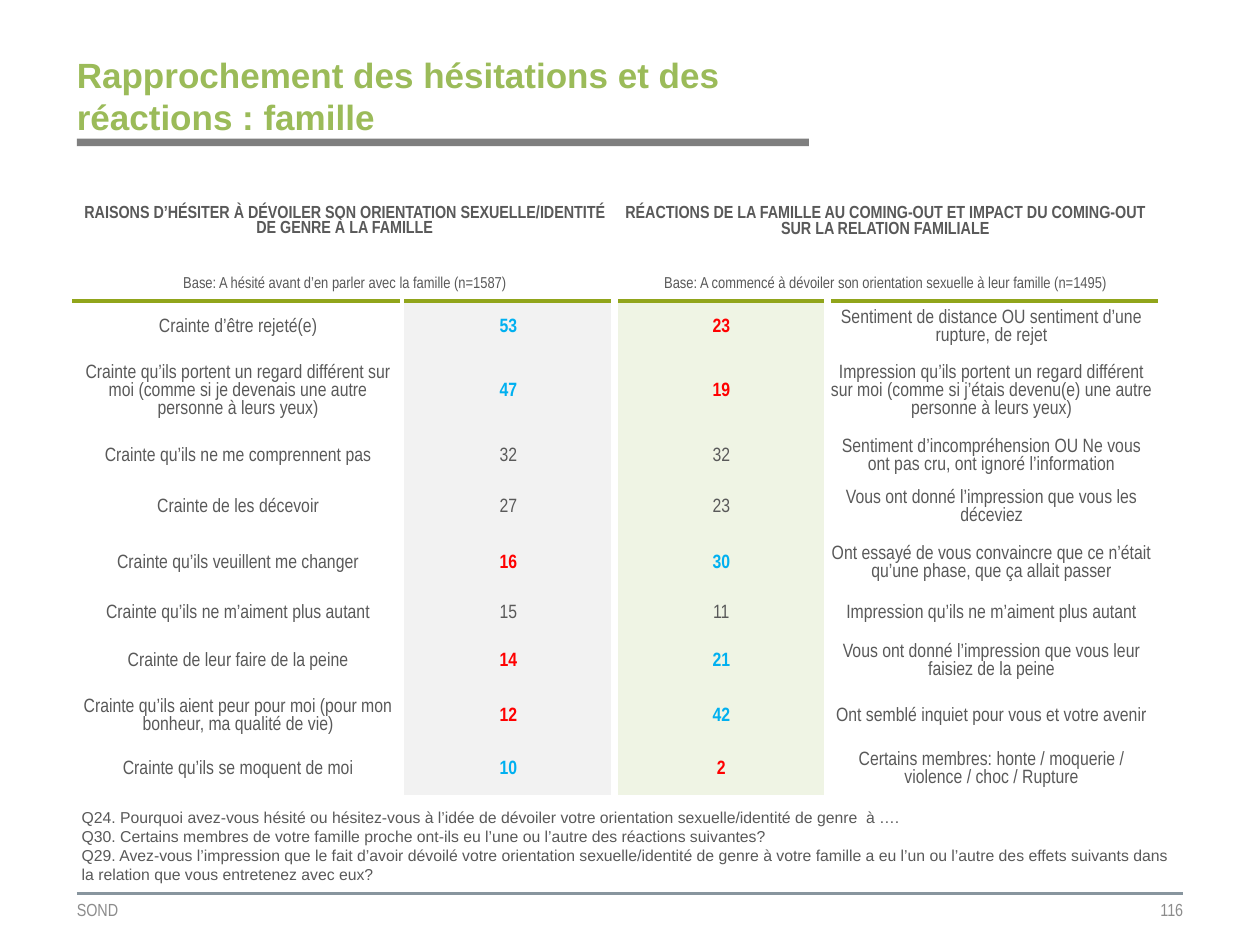
from dataclasses import dataclass
from typing import Optional

import pptx
import pptx.dml.color
import pptx.enum.shapes
import pptx.enum.text
import pptx.oxml.ns
import pptx.util
from lxml import etree

Pt = pptx.util.Pt
ALIGN = pptx.enum.text.PP_ALIGN
MIDDLE = pptx.enum.text.MSO_ANCHOR.MIDDLE

TEXT, BLUE, RED = "595959", "00B0F0", "FF0000"
WHITE, GREEN, FOOTER = "FFFFFF", "91A51B", "8C8C8C"
NARROW = "Arial Narrow"
LEFT, RIGHT = 43.92, 676.08

COLUMN_WIDTHS = [187.2, 121.68, 121.68, 187.2]
COLUMN_FILLS = [None, "F2F2F2", "EFF4E4", WHITE]
COLUMN_EDGES = [3, 3, 4.5, 4.5, 3]
ROW_HEIGHTS = [52.56, 19.44, 29.52, 43.92, 29.52, 29.52, 34.56, 22.32, 32.4, 30.96, 29.52]


@dataclass
class Header:
    left: str
    right: str
    size: float
    bold: bool


@dataclass
class Comparison:
    fear: str
    fear_value: int
    reaction_value: int
    reaction: str
    fear_color: str = TEXT
    reaction_color: str = TEXT


HEADERS = [
    Header("RAISONS D’HÉSITER À DÉVOILER SON ORIENTATION SEXUELLE/IDENTITÉ DE GENRE À LA FAMILLE",
           "RÉACTIONS DE LA FAMILLE AU COMING-OUT ET IMPACT DU COMING-OUT SUR LA RELATION FAMILIALE",
           10, True),
    Header("Base: A hésité avant d’en parler avec la famille (n=1587)",
           "Base: A commencé à dévoiler son orientation sexuelle à leur famille (n=1495)", 9, False),
]
COMPARISONS = [
    Comparison("Crainte d’être rejeté(e)", 53, 23,
               "Sentiment de distance OU sentiment d’une rupture, de rejet", BLUE, RED),
    Comparison("Crainte qu’ils portent un regard différent sur moi (comme si je devenais une autre "
               "personne à leurs yeux)", 47, 19,
               "Impression qu’ils portent un regard différent sur moi (comme si j’étais devenu(e) "
               "une autre personne à leurs yeux)", BLUE, RED),
    Comparison("Crainte qu’ils ne me comprennent pas", 32, 32,
               "Sentiment d’incompréhension OU Ne vous ont pas cru, ont ignoré l’information"),
    Comparison("Crainte de les décevoir", 27, 23,
               "Vous ont donné l’impression que vous les déceviez"),
    Comparison("Crainte qu’ils veuillent me changer", 16, 30,
               "Ont essayé de vous convaincre que ce n’était qu’une phase, que ça allait passer",
               RED, BLUE),
    Comparison("Crainte qu’ils ne m’aiment plus autant", 15, 11,
               "Impression qu’ils ne m’aiment plus autant"),
    Comparison("Crainte de leur faire de la peine", 14, 21,
               "Vous ont donné l’impression que vous leur faisiez de la peine", RED, BLUE),
    Comparison("Crainte qu’ils aient peur pour moi (pour mon bonheur, ma qualité de vie)", 12, 42,
               "Ont semblé inquiet pour vous et votre avenir", RED, BLUE),
    Comparison("Crainte qu’ils se moquent de moi", 10, 2,
               "Certains membres: honte / moquerie / violence / choc / Rupture", BLUE, RED),
]
QUESTIONS = [
    "Q24. Pourquoi avez-vous hésité ou hésitez-vous à l’idée de dévoiler votre orientation "
    "sexuelle/identité de genre  à ….",
    "Q30. Certains membres de votre famille proche ont-ils eu l’une ou l’autre des réactions "
    "suivantes?",
    "Q29. Avez-vous l’impression que le fait d’avoir dévoilé votre orientation sexuelle/identité "
    "de genre à votre famille a eu l’un ou l’autre des effets suivants dans la relation que vous "
    "entretenez avec eux?",
]


def rgb(value: str) -> pptx.dml.color.RGBColor:
    return pptx.dml.color.RGBColor.from_string(value)


def write(text_frame, text: str, font: str, size: float, color: str,
          bold: bool = False, align=ALIGN.LEFT) -> None:
    text_frame.text = text
    for paragraph in text_frame.paragraphs:
        paragraph.alignment = align
        for run in paragraph.runs:
            run.font.name = font
            run.font.size = Pt(size)
            run.font.bold = bold
            run.font.color.rgb = rgb(color)


def clear_margins(text_frame) -> None:
    text_frame.margin_left = text_frame.margin_right = 0
    text_frame.margin_top = text_frame.margin_bottom = 0
    text_frame.vertical_anchor = MIDDLE
    text_frame.word_wrap = True


def add_text_box(slide, left: float, top: float, width: float, height: float):
    shape = slide.shapes.add_textbox(Pt(left), Pt(top), Pt(width), Pt(height))
    shape.text_frame.word_wrap = True
    return shape.text_frame


def set_border(cell, side: str, color: Optional[str], width: float = 0) -> None:
    """Append one border; call in the order L, R, T, B and before the fill."""
    properties = cell._tc.get_or_add_tcPr()
    line = etree.SubElement(properties, pptx.oxml.ns.qn(f"a:ln{side}"), w=str(int(Pt(width))))
    if color is None:
        etree.SubElement(line, pptx.oxml.ns.qn("a:noFill"))
    else:
        fill = etree.SubElement(line, pptx.oxml.ns.qn("a:solidFill"))
        etree.SubElement(fill, pptx.oxml.ns.qn("a:srgbClr"), val=color)


def style_cell(cell, row: int, column: int) -> None:
    header = row < len(HEADERS)
    cell.vertical_anchor = MIDDLE
    if header and column < 2:
        cell.margin_left = cell.margin_right = 0
        cell.margin_top = cell.margin_bottom = Pt(3.6)
    else:
        cell.margin_left = cell.margin_right = cell.margin_top = Pt(0.72)
        cell.margin_bottom = 0
    set_border(cell, "L", WHITE, 3 if header else COLUMN_EDGES[column])
    set_border(cell, "R", WHITE, 3 if header else COLUMN_EDGES[column + 1])
    rule = (GREEN, 3)
    set_border(cell, "T", *(rule if row == len(HEADERS) else (None,)))
    set_border(cell, "B", *(rule if row == len(HEADERS) - 1 else (None,)))
    fill = None if header else COLUMN_FILLS[column]
    if fill is None:
        cell.fill.background()
    else:
        cell.fill.solid()
        cell.fill.fore_color.rgb = rgb(fill)


def add_comparison_table(slide) -> None:
    table = slide.shapes.add_table(len(ROW_HEIGHTS), len(COLUMN_WIDTHS), Pt(42.48), Pt(100.08),
                                   Pt(sum(COLUMN_WIDTHS)), Pt(sum(ROW_HEIGHTS))).table
    table.first_row = table.horz_banding = False
    for column, width in zip(table.columns, COLUMN_WIDTHS):
        column.width = Pt(width)
    for row, height in zip(table.rows, ROW_HEIGHTS):
        row.height = Pt(height)
    for row in range(len(ROW_HEIGHTS)):
        for column in range(len(COLUMN_WIDTHS)):
            style_cell(table.cell(row, column), row, column)

    for row, header in enumerate(HEADERS):
        for column, text in ((0, header.left), (2, header.right)):
            cell = table.cell(row, column)
            cell.merge(table.cell(row, column + 1))
            write(cell.text_frame, text, NARROW, header.size, TEXT, header.bold, ALIGN.CENTER)
    table.cell(0, 0).text_frame.paragraphs[0].line_spacing = 0.95

    for row, item in enumerate(COMPARISONS, len(HEADERS)):
        entries = [(item.fear, TEXT), (str(item.fear_value), item.fear_color),
                   (str(item.reaction_value), item.reaction_color), (item.reaction, TEXT)]
        for column, (text, color) in enumerate(entries):
            write(table.cell(row, column).text_frame, text, NARROW, 11, color,
                  color != TEXT, ALIGN.CENTER)


def main() -> None:
    presentation = pptx.Presentation()
    presentation.slide_width, presentation.slide_height = Pt(720), Pt(540)
    slide = presentation.slides.add_slide(presentation.slide_layouts[5])

    # Title and its underline
    title = slide.shapes.title
    title.left, title.top, title.width, title.height = Pt(LEFT), Pt(29.52), Pt(418.32), Pt(49.68)
    clear_margins(title.text_frame)
    title.text_frame.auto_size = pptx.enum.text.MSO_AUTO_SIZE.NONE
    write(title.text_frame, "Rapprochement des hésitations et des réactions : famille",
          "Arial", 20, "9BBB59", True)
    underline = slide.shapes.add_shape(pptx.enum.shapes.MSO_SHAPE.RECTANGLE,
                                       Pt(LEFT), Pt(79.2), Pt(418.32), Pt(4.32))
    underline.shadow.inherit = False
    underline.fill.solid()
    underline.fill.fore_color.rgb = rgb("7F7F7F")
    underline.line.fill.background()

    add_comparison_table(slide)

    # Survey questions
    questions = add_text_box(slide, 39.6, 457.92, 637.92, 61.92)
    write(questions, "\n".join(QUESTIONS), "Arial", 9, TEXT)

    # Footer
    rule = slide.shapes.add_connector(pptx.enum.shapes.MSO_CONNECTOR.STRAIGHT,
                                      Pt(LEFT), Pt(510.48), Pt(RIGHT), Pt(510.48))
    rule.line.color.rgb = rgb("88959E")
    rule.line.width = Pt(1.5)
    etree.SubElement(rule._element.spPr, pptx.oxml.ns.qn("a:effectLst"))
    for left, text, align in ((LEFT, "SOND", ALIGN.LEFT), (RIGHT - 204, "116", ALIGN.RIGHT)):
        footer = add_text_box(slide, left, 510.48, 204, 18.72)
        clear_margins(footer)
        write(footer, text, NARROW, 10, FOOTER, align=align)

    presentation.save("out.pptx")


if __name__ == "__main__":
    main()
